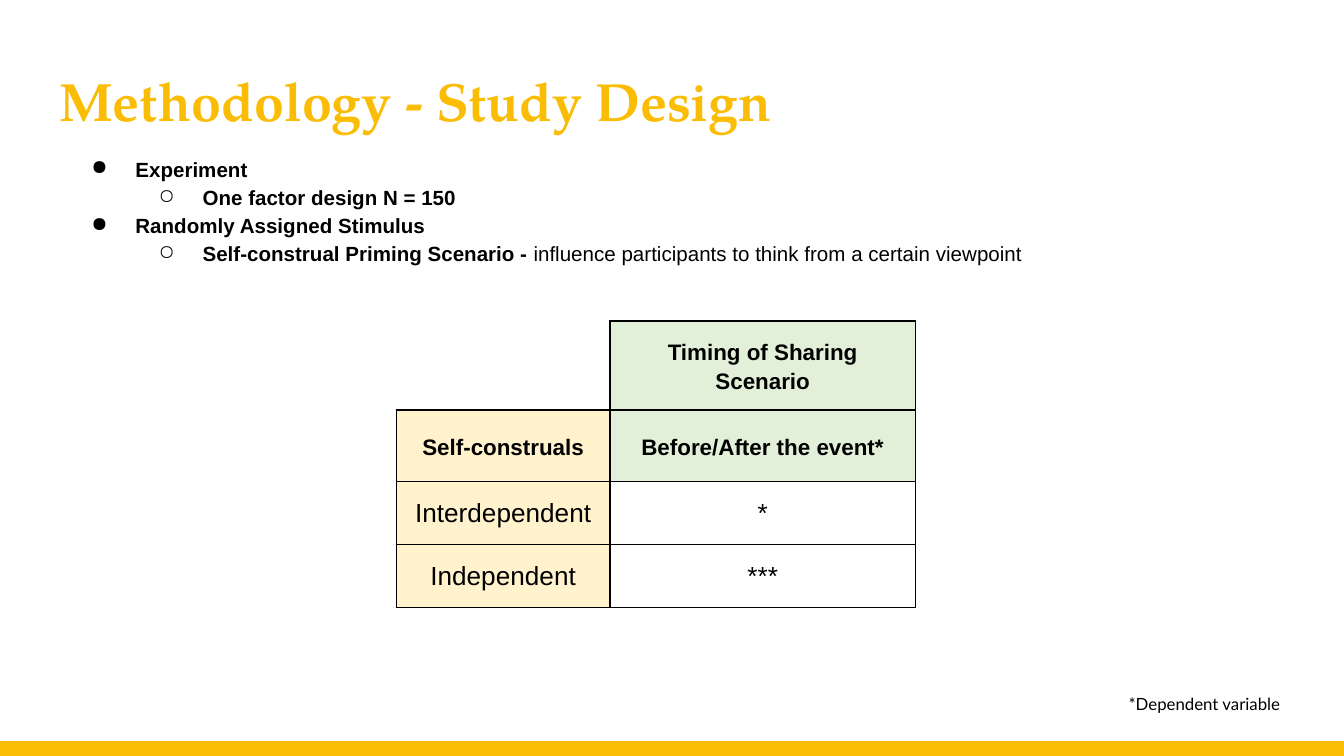
from lxml.etree import SubElement
from pptx import Presentation
from pptx.dml.color import RGBColor
from pptx.enum.shapes import MSO_SHAPE
from pptx.enum.text import MSO_ANCHOR, PP_ALIGN
from pptx.oxml.ns import qn
from pptx.util import Cm, Pt

GOLD = RGBColor(0xFB, 0xBC, 0x04)
BLACK = RGBColor(0, 0, 0)
WHITE = RGBColor(0xFF, 0xFF, 0xFF)
GREEN = RGBColor(0xE2, 0xEF, 0xD9)
CREAM = RGBColor(0xFF, 0xF2, 0xCC)


def add_run(para, text, size, bold=False, face="Arial", color=BLACK):
    run = para.add_run()
    run.text = text
    font = run.font
    font.name, font.size, font.bold = face, Pt(size), bold
    font.color.rgb = color


def add_box(slide, box):
    frame = slide.shapes.add_textbox(*map(Cm, box)).text_frame
    frame.word_wrap = True
    frame.margin_left = frame.margin_right = Cm(0.25)
    frame.margin_top = frame.margin_bottom = Cm(0.25)
    return frame


def add_title(slide, box):
    frame = add_box(slide, box)
    add_run(frame.paragraphs[0], "Methodology - Study Design", 28.8, True,
            "TeX Gyre Pagella", GOLD)


def add_list(slide, box):
    frame = add_box(slide, box)
    items = [
        (0, [("Experiment", True)]),
        (1, [("One factor design N = 150", True)]),
        (0, [("Randomly Assigned Stimulus", True)]),
        (1, [("Self-construal Priming Scenario - ", True),
             ("influence participants to think from a certain viewpoint", False)]),
    ]
    for i, (level, parts) in enumerate(items):
        para = frame.add_paragraph() if i else frame.paragraphs[0]
        para.level = level
        para.line_spacing = 1.15
        props = para._p.get_or_add_pPr()
        props.set("marL", str(Cm(1.27 * (level + 1))))
        props.set("indent", str(Cm(-0.83)))
        SubElement(props, qn("a:buChar")).set("char", "●○"[level])
        for text, bold in parts:
            add_run(para, text, 11, bold)


def set_edge(cell, side, color):
    line = SubElement(cell._tc.get_or_add_tcPr(), qn("a:ln" + side))
    line.set("w", str(Pt(1)))
    fill = SubElement(line, qn("a:solidFill"))
    SubElement(fill, qn("a:srgbClr")).set("val", str(color))


def fill_cell(cell, text, fill, size, bold, blank):
    cell.margin_left = cell.margin_right = Cm(0.18)
    cell.margin_top = cell.margin_bottom = Cm(0.25)
    cell.vertical_anchor = MSO_ANCHOR.MIDDLE if bold else MSO_ANCHOR.TOP
    for side in "LRTB":
        set_edge(cell, side, WHITE if blank and side in "LT" else BLACK)
    if fill:
        cell.fill.solid()
        cell.fill.fore_color.rgb = fill
    else:
        cell.fill.background()
    para = cell.text_frame.paragraphs[0]
    para.alignment = PP_ALIGN.CENTER
    para.line_spacing = 1.15
    if text:
        add_run(para, text, size, bold)


def add_grid(slide, box):
    rows = [
        (1.68, 12, True, [("", None), ("Timing of Sharing Scenario", GREEN)]),
        (1.35, 12, True, [("Self-construals", CREAM), ("Before/After the event*", GREEN)]),
        (1.19, 14, False, [("Interdependent", CREAM), ("*", None)]),
        (1.19, 14, False, [("Independent", CREAM), ("***", None)]),
    ]
    table = slide.shapes.add_table(len(rows), 2, *map(Cm, box)).table
    table.first_row = table.horz_banding = False
    for col, width in zip(table.columns, (4.04, 5.77)):
        col.width = Cm(width)
    for r, (height, size, bold, cells) in enumerate(rows):
        table.rows[r].height = Cm(height)
        for c, (text, fill) in enumerate(cells):
            fill_cell(table.cell(r, c), text, fill, size, bold, not text)


def add_note(slide, box):
    frame = add_box(slide, box)
    add_run(frame.paragraphs[0], "*Dependent variable", 9, face="Lato")


def add_bar(slide, box):
    bar = slide.shapes.add_shape(MSO_SHAPE.RECTANGLE, *map(Cm, box))
    bar.shadow.inherit = False
    bar.fill.solid()
    bar.fill.fore_color.rgb = GOLD
    bar.line.fill.background()


def main():
    deck = Presentation()
    deck.slide_width, deck.slide_height = Cm(25.4), Cm(14.29)
    slide = deck.slides.add_slide(deck.slide_layouts[6])
    add_bar(slide, (0, 14.01, 25.4, 0.28))
    add_title(slide, (0.87, 1.04, 23.67, 1.8))
    add_list(slide, (1.04, 2.64, 23.04, 3.15))
    add_grid(slide, (7.49, 6.07, 9.81, 5.41))
    add_note(slide, (21.08, 12.93, 4.11, 0.89))
    deck.save("out.pptx")


if __name__ == "__main__":
    main()
